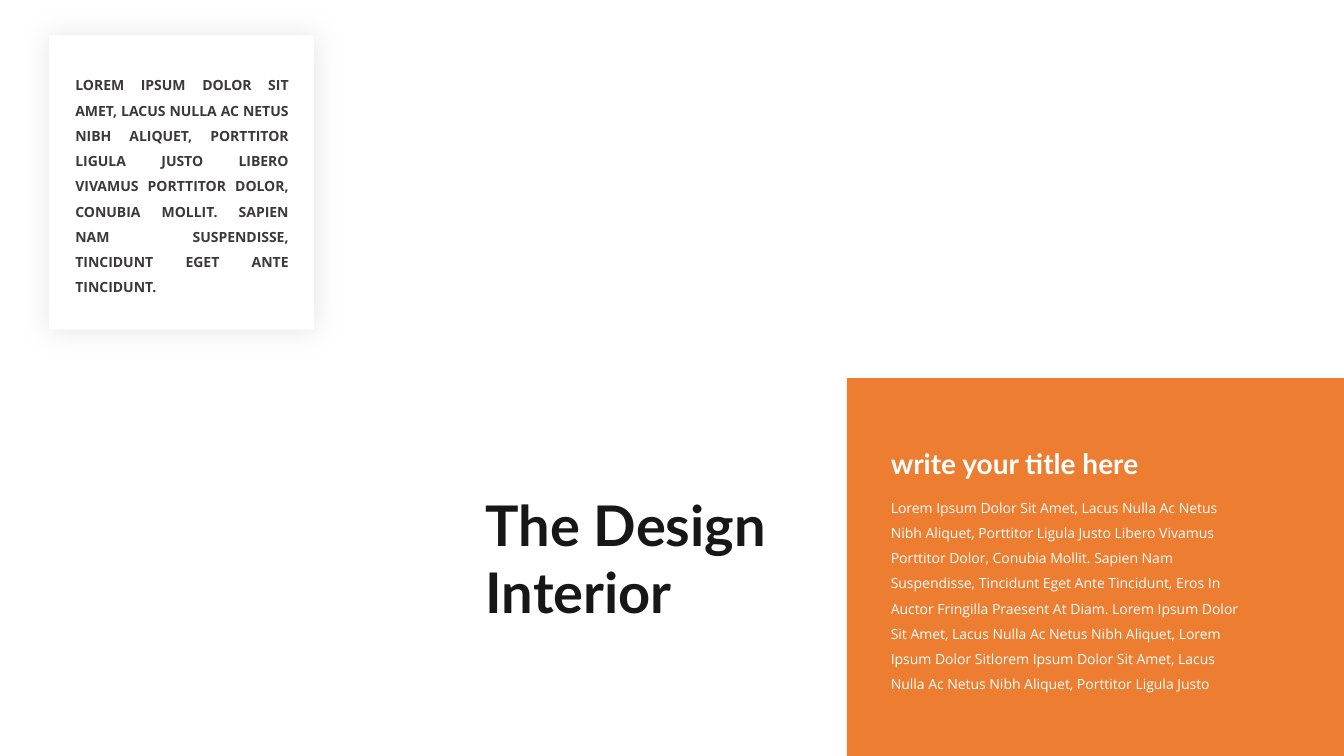
from dataclasses import dataclass

from lxml.etree import SubElement
from pptx import Presentation
from pptx.dml.color import RGBColor
from pptx.enum.shapes import MSO_SHAPE as Kind
from pptx.enum.text import MSO_ANCHOR as Anchor, MSO_AUTO_SIZE as Fit, PP_ALIGN as Align
from pptx.oxml.ns import qn
from pptx.util import Cm, Pt

WHITE = "FFFFFF"


@dataclass
class Box:
    left: float
    top: float
    width: float
    height: float


@dataclass
class Panel:
    box: Box
    fill: str
    glow: str = ""


@dataclass
class Note:
    box: Box
    text: str
    size: float
    font: str
    color: str
    bold: bool = True
    align: Align = Align.LEFT
    space: float = 1.0


def rgb(code: str) -> RGBColor:
    return RGBColor.from_string(code)


def place(shape, box: Box) -> None:
    shape.left, shape.top = Cm(box.left), Cm(box.top)
    shape.width, shape.height = Cm(box.width), Cm(box.height)


def add_panel(slide, panel: Panel) -> None:
    shape = slide.shapes.add_shape(Kind.RECTANGLE, 0, 0, 0, 0)
    place(shape, panel.box)
    shape.fill.solid()
    shape.fill.fore_color.rgb = rgb(panel.fill)
    shape.line.fill.background()
    shape.shadow.inherit = False
    if panel.glow:
        add_glow(shape, panel.glow)


def add_glow(shape, color: str) -> None:
    """Spread a soft, centred shadow around the shape."""
    effects = shape._element.spPr.find(qn("a:effectLst"))
    shadow = SubElement(effects, qn("a:outerShdw"), blurRad=str(Pt(20)),
                        dist="0", dir="0", algn="ctr", rotWithShape="0")
    tint = SubElement(shadow, qn("a:srgbClr"), val=color)
    SubElement(tint, qn("a:alpha"), val="40000")


def set_note(shape, note: Note) -> None:
    place(shape, note.box)
    frame = shape.text_frame
    frame.text = note.text
    frame.word_wrap = True
    frame.auto_size = Fit.SHAPE_TO_FIT_TEXT
    frame.vertical_anchor = Anchor.TOP
    para = frame.paragraphs[0]
    para.alignment = note.align
    para.line_spacing = note.space
    font = para.runs[0].font
    font.name, font.size, font.bold = note.font, Pt(note.size), note.bold
    font.color.rgb = rgb(note.color)


# Content
PANELS = [
    Panel(Box(21.34, 9.53, 12.53, 9.52), "ED7D31"),
    Panel(Box(1.24, 0.89, 6.68, 7.42), WHITE, glow="BFBFBF"),
]

TITLE = Note(Box(11.99, 12.24, 8.28, 3.68), "The Design Interior", 40, "Lato", "181717")

NOTES = [
    Note(Box(1.65, 1.6, 5.87, 6.02),
         "LOREM IPSUM DOLOR SIT AMET, LACUS NULLA AC NETUS NIBH ALIQUET, "
         "PORTTITOR LIGULA JUSTO LIBERO VIVAMUS PORTTITOR DOLOR, CONUBIA MOLLIT. "
         "SAPIEN NAM SUSPENDISSE, TINCIDUNT EGET ANTE TINCIDUNT.",
         10, "Open Sans", "3B3838", align=Align.JUSTIFY, space=1.5),
    Note(Box(22.2, 12.24, 9.45, 5.38),
         "Lorem Ipsum Dolor Sit Amet, Lacus Nulla Ac Netus Nibh Aliquet, "
         "Porttitor Ligula Justo Libero Vivamus Porttitor Dolor, Conubia Mollit. "
         "Sapien Nam Suspendisse, Tincidunt Eget Ante Tincidunt, Eros In Auctor "
         "Fringilla Praesent At Diam. Lorem Ipsum Dolor Sit Amet, Lacus Nulla Ac "
         "Netus Nibh Aliquet, Lorem Ipsum Dolor Sitlorem Ipsum Dolor Sit Amet, "
         "Lacus Nulla Ac Netus Nibh Aliquet, Porttitor Ligula Justo",
         10, "Open Sans", WHITE, bold=False, space=1.5),
    Note(Box(22.2, 11.13, 7.16, 1.12), "write your title here", 20, "Lato", WHITE),
]


def main() -> None:
    deck = Presentation()
    deck.slide_width, deck.slide_height = Cm(33.87), Cm(19.05)
    slide = deck.slides.add_slide(deck.slide_layouts[5])

    # Panels behind the text
    for panel in PANELS:
        add_panel(slide, panel)

    # Title and texts
    set_note(slide.shapes.title, TITLE)
    for note in NOTES:
        set_note(slide.shapes.add_textbox(0, 0, 0, 0), note)

    deck.save("out.pptx")


if __name__ == "__main__":
    main()
